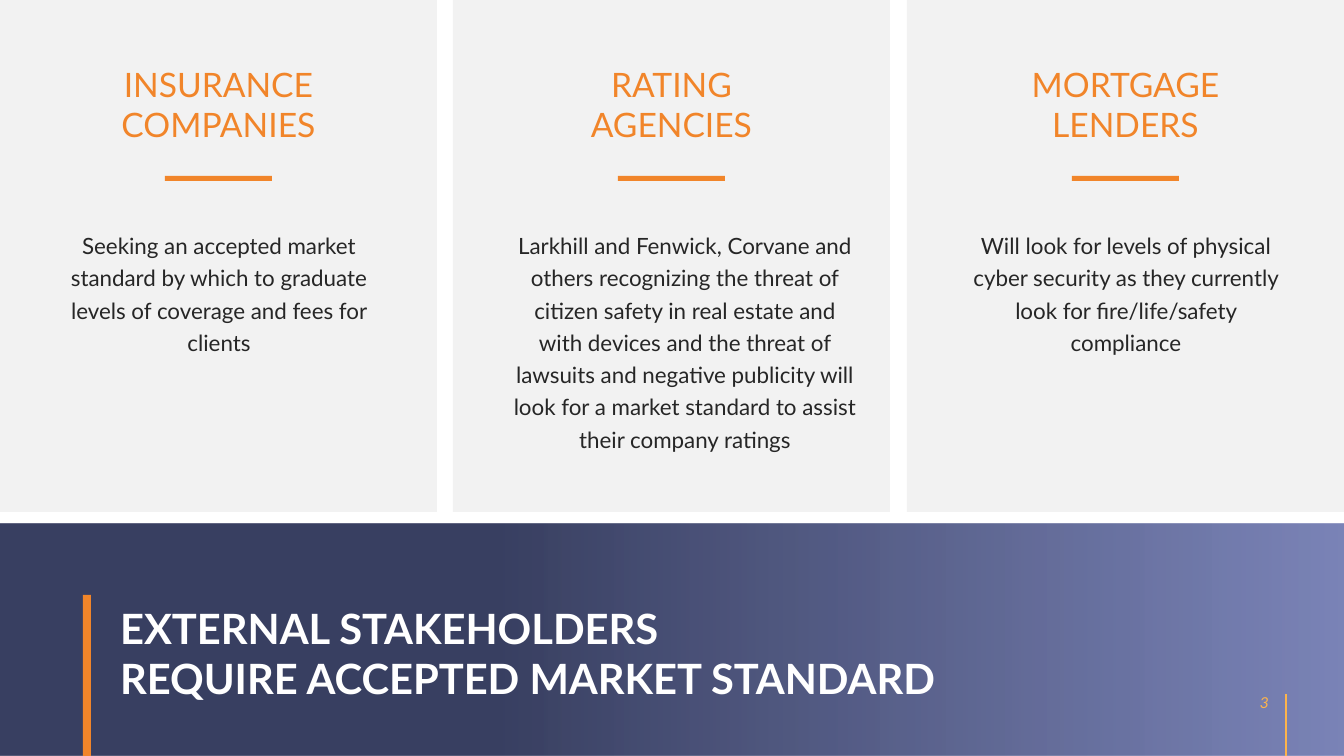
"""Build the slide on external stakeholders: three columns above a title band."""
from lxml import etree
from pptx import Presentation
from pptx.dml.color import RGBColor
from pptx.enum import shapes, text
from pptx.oxml import ns
from pptx import util as u

SLIDE_WIDTH, SLIDE_HEIGHT = 1344, 756
PX = 12192000 / SLIDE_WIDTH
COLORS = {
    "panel": "F2F2F2",
    "orange": "F1852A",
    "body": "262626",
    "navy": "30375A",
    "periwinkle": "6D77B0",
    "white": "FFFFFF",
    "amber": "FDB44B",
}
COLUMNS = [
    (["INSURANCE", "COMPANIES"], 338,
     "Seeking an accepted market standard by which to graduate levels of "
     "coverage and fees for clients"),
    (["RATING", "AGENCIES"], 364,
     "Larkhill and Fenwick, Corvane and others recognizing the threat of "
     "citizen safety in real estate and with devices and the threat of "
     "lawsuits and negative publicity will look for a market standard to "
     "assist their company ratings"),
    (["MORTGAGE", "LENDERS"], 338,
     "Will look for levels of physical cyber security as they currently "
     "look for fire/life/safety compliance"),
]

deck = Presentation()
deck.slide_width = round(SLIDE_WIDTH * PX)
deck.slide_height = round(SLIDE_HEIGHT * PX)
page = deck.slides.add_slide(deck.slide_layouts[5])


def add_block(left, top, width, height, color):
    """Add a plain filled rectangle."""
    block = page.shapes.add_shape(
        shapes.MSO_SHAPE.RECTANGLE,
        *(round(n * PX) for n in (left, top, width, height)))
    block.shadow.inherit = False
    block.line.fill.background()
    block.fill.solid()
    block.fill.fore_color.rgb = RGBColor.from_string(COLORS[color])
    return block


def write(box, bounds, lines, size, color, align, spacing=1.0, after=0,
          anchor=text.MSO_ANCHOR.TOP, font="Lato", bold=False, italic=False):
    """Place a text shape and fill it with one paragraph per line."""
    box.left, box.top, box.width, box.height = (round(n * PX) for n in bounds)
    frame = box.text_frame
    frame.word_wrap = True
    frame.auto_size = text.MSO_AUTO_SIZE.NONE
    frame.vertical_anchor = anchor
    for index, line in enumerate(lines):
        para = frame.add_paragraph() if index else frame.paragraphs[0]
        para.alignment = align
        para.line_spacing = spacing
        para.space_before = u.Pt(0)
        para.space_after = u.Pt(after)
        span = para.add_run()
        span.text = line
        span.font.name = font
        span.font.size = u.Pt(size)
        span.font.bold = bold
        span.font.italic = italic
        span.font.color.rgb = RGBColor.from_string(COLORS[color])


for column, (heading, body_width, body) in enumerate(COLUMNS):
    left = column * 907 // 2
    add_block(left, 0, 437, 512, "panel")
    write(page.shapes.add_textbox(0, 0, 0, 0), (left, 59, 437, 92),
          heading, 24, "orange", text.PP_ALIGN.CENTER)
    add_block(left + 165, 176, 107, 5, "orange")
    write(page.shapes.add_textbox(0, 0, 0, 0), (left + 50, 222, body_width, 236),
          [body], 16, "body", text.PP_ALIGN.CENTER, spacing=1.2)

band = add_block(0, 524, SLIDE_WIDTH, 232, "navy")
band.fill.gradient()
band.fill.gradient_angle = 0
for stop, position, color in zip(band.fill.gradient_stops, (0.37, 1),
                                 ("navy", "periwinkle")):
    stop.position = position
    stop.color.rgb = RGBColor.from_string(COLORS[color])
for tint, opacity in zip(band._element.spPr.iter(ns.qn("a:srgbClr")), (95, 90)):
    etree.SubElement(tint, ns.qn("a:alpha"), val=str(opacity * 1000))

add_block(83, 595, 8, 161, "orange")

title = page.shapes.title
page.shapes._spTree.append(title._element)
write(title, (110, 603, 1164, 113),
      ["EXTERNAL STAKEHOLDERS", "REQUIRE ACCEPTED MARKET STANDARD"],
      29.8, "white", text.PP_ALIGN.LEFT, spacing=0.9, after=4, bold=True)

write(page.shapes.add_textbox(0, 0, 0, 0), (976, 682, 302, 40), ["3"], 12,
      "amber", text.PP_ALIGN.RIGHT, anchor=text.MSO_ANCHOR.MIDDLE,
      font="Calibri", italic=True)

rule = page.shapes.add_connector(
    shapes.MSO_CONNECTOR.STRAIGHT,
    *(round(n * PX) for n in (1286, 756, 1286, 694)))
rule.line.color.rgb = RGBColor.from_string(COLORS["amber"])
rule.line.width = u.Pt(1.5)
etree.SubElement(rule._element.spPr, ns.qn("a:effectLst"))

deck.save("out.pptx")
